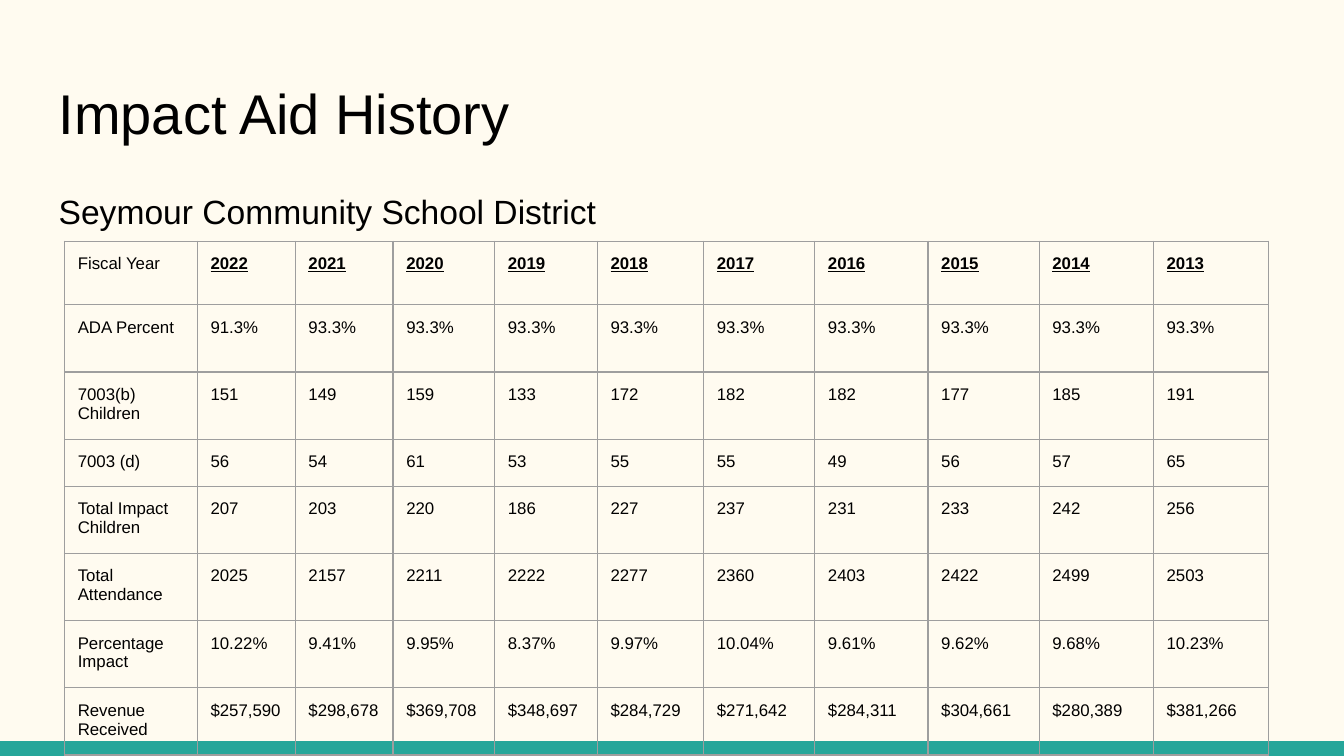
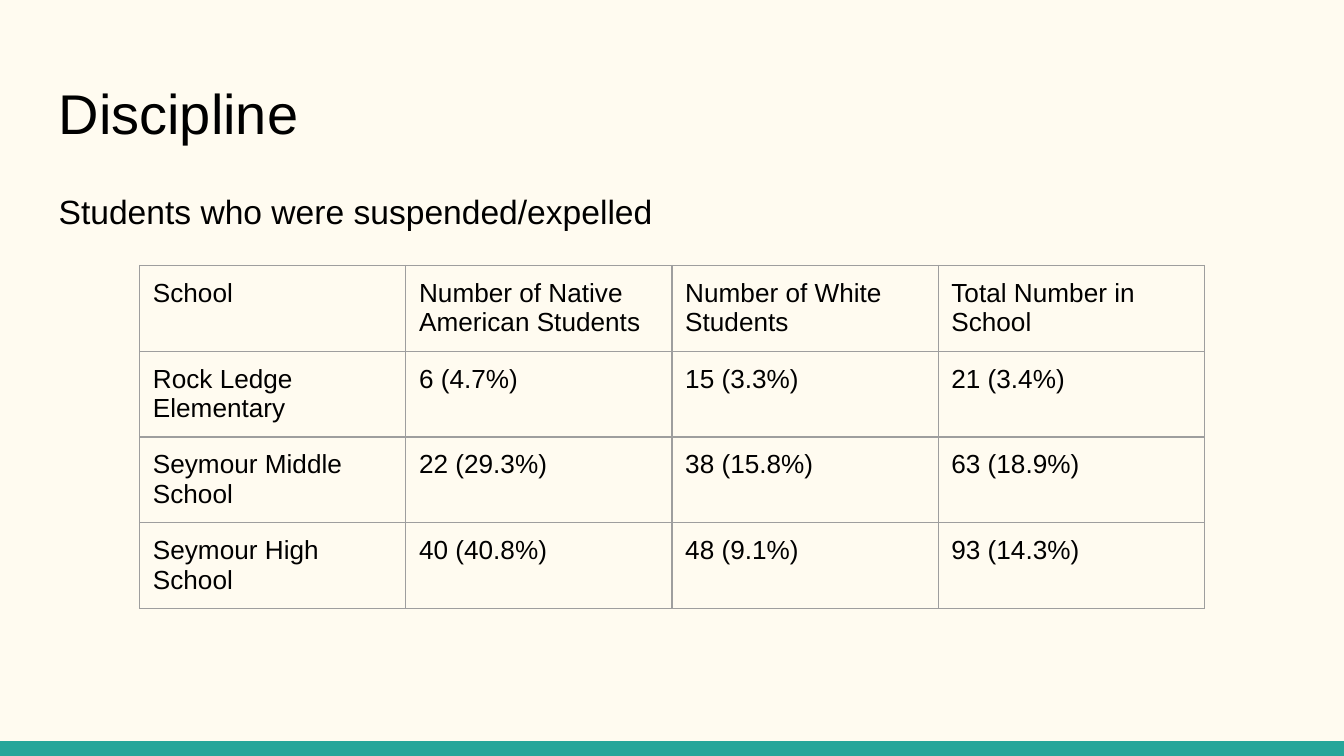
from lxml import etree
from pptx import Presentation
from pptx.dml.color import RGBColor
from pptx.enum.shapes import MSO_SHAPE
from pptx.enum.text import MSO_ANCHOR, MSO_AUTO_SIZE, PP_ALIGN
from pptx.oxml.ns import qn
from pptx.util import Cm, Pt

RECTANGLE = MSO_SHAPE.RECTANGLE
TOP = MSO_ANCHOR.TOP
NO_AUTOFIT = MSO_AUTO_SIZE.NONE
LEFT = PP_ALIGN.LEFT

CREAM = RGBColor(0xFF, 0xFB, 0xF0)
TEAL = RGBColor(0x26, 0xA6, 0x9A)
BLACK = RGBColor(0x00, 0x00, 0x00)
GREY = RGBColor(0x9E, 0x9E, 0x9E)

FONT = "Arial"
INSET = Cm(0.25)
WIDTH, HEIGHT = Cm(25.4), Cm(14.29)
MARGIN, TEXT_WIDTH = Cm(0.86), Cm(23.67)
BAND_HEIGHT = Cm(0.28)
BORDER = Pt(0.75)


class Deck:
    """Holds the shared style and the slide being built."""

    def __init__(self):
        self.prs = Presentation()
        self.prs.slide_width, self.prs.slide_height = WIDTH, HEIGHT
        fill = self.prs.slide_master.background.fill
        fill.solid()
        fill.fore_color.rgb = CREAM
        self.s = None

    def slide(self, title, subtitle):
        self.s = self.prs.slides.add_slide(self.prs.slide_layouts[5])
        self.band()
        self.title(title)
        self.subtitle(subtitle)

    def band(self):
        sp = self.s.shapes.add_shape(RECTANGLE, 0, HEIGHT - BAND_HEIGHT, WIDTH, BAND_HEIGHT)
        sp.shadow.inherit = False
        sp.fill.solid()
        sp.fill.fore_color.rgb = TEAL
        sp.line.fill.background()

    def title(self, text):
        sp = self.s.shapes.title
        sp.left, sp.top, sp.width, sp.height = MARGIN, Cm(1.24), TEXT_WIDTH, Cm(1.7)
        self.frame(sp.text_frame)
        self.run(sp.text_frame, text, 30)

    def subtitle(self, text):
        sp = self.s.shapes.add_textbox(MARGIN, Cm(3.25), TEXT_WIDTH, Cm(9.45))
        self.frame(sp.text_frame)
        p = self.run(sp.text_frame, text, 18)
        p.line_spacing = 1.15

    def frame(self, tf):
        tf.word_wrap = True
        tf.auto_size = NO_AUTOFIT
        tf.vertical_anchor = TOP
        self.insets(tf)

    def insets(self, holder):
        holder.margin_left = holder.margin_right = INSET
        holder.margin_top = holder.margin_bottom = INSET

    def run(self, tf, text, size, strong=False):
        p = tf.paragraphs[0]
        p.alignment = LEFT
        r = p.add_run()
        r.text = text
        r.font.name, r.font.size = FONT, Pt(size)
        r.font.color.rgb = BLACK
        r.font.bold = r.font.underline = strong
        return p

    def table(self, left, top, col_widths, row_heights, rows, size, strong_head=False):
        sp = self.s.shapes.add_table(len(rows), len(rows[0]), Cm(left), Cm(top),
                                     Cm(sum(col_widths)), Cm(sum(row_heights)))
        table = sp.table
        table.first_row = table.horz_banding = False
        for column, width in zip(table.columns, col_widths):
            column.width = Cm(width)
        for row, height in zip(table.rows, row_heights):
            row.height = Cm(height)
        for i, texts in enumerate(rows):
            for j, text in enumerate(texts):
                cell = table.cell(i, j)
                self.insets(cell)
                self.borders(cell)
                cell.fill.background()
                self.run(cell.text_frame, text, size, strong_head and i == 0 and j > 0)

    def borders(self, cell):
        tc_pr = cell._tc.get_or_add_tcPr()
        for side in ("a:lnL", "a:lnR", "a:lnT", "a:lnB"):
            ln = etree.SubElement(tc_pr, qn(side), w=str(BORDER))
            fill = etree.SubElement(ln, qn("a:solidFill"))
            etree.SubElement(fill, qn("a:srgbClr"), val=str(GREY))


IMPACT_AID = [
    ["Fiscal Year"] + [str(year) for year in range(2022, 2012, -1)],
    ["ADA Percent", "91.3%"] + ["93.3%"] * 9,
    ["7003(b) Children", "151", "149", "159", "133", "172", "182", "182", "177", "185", "191"],
    ["7003 (d)", "56", "54", "61", "53", "55", "55", "49", "56", "57", "65"],
    ["Total Impact Children", "207", "203", "220", "186", "227", "237", "231", "233", "242",
     "256"],
    ["Total Attendance", "2025", "2157", "2211", "2222", "2277", "2360", "2403", "2422", "2499",
     "2503"],
    ["Percentage Impact", "10.22%", "9.41%", "9.95%", "8.37%", "9.97%", "10.04%", "9.61%",
     "9.62%", "9.68%", "10.23%"],
    ["Revenue Received", "$257,590", "$298,678", "$369,708", "$348,697", "$284,729", "$271,642",
     "$284,311", "$304,661", "$280,389", "$381,266"],
]

DISCIPLINE = [
    ["School", "Number of Native American Students", "Number of White Students",
     "Total Number in School"],
    ["Rock Ledge Elementary", "6 (4.7%)", "15 (3.3%)", "21 (3.4%)"],
    ["Seymour Middle School", "22 (29.3%)", "38 (15.8%)", "63 (18.9%)"],
    ["Seymour High School", "40 (40.8%)", "48 (9.1%)", "93 (14.3%)"],
]


def main():
    deck = Deck()

    # Impact aid by fiscal year
    deck.slide("Impact Aid History", "Seymour Community School District")
    deck.table(1.22, 4.56,
               [2.51, 1.85, 1.85, 1.92, 1.94, 2.01, 2.1, 2.14, 2.1, 2.16, 2.18],
               [1.2, 1.27, 1.27, 0.89] + [1.27] * 4,
               IMPACT_AID, 9, strong_head=True)

    # Suspensions and expulsions by school
    deck.slide("Discipline", "Students who were suspended/expelled")
    deck.table(2.64, 5.02, [5.03] * 4, [1.62] * 4, DISCIPLINE, 14)

    deck.prs.save("out.pptx")


if __name__ == "__main__":
    main()
